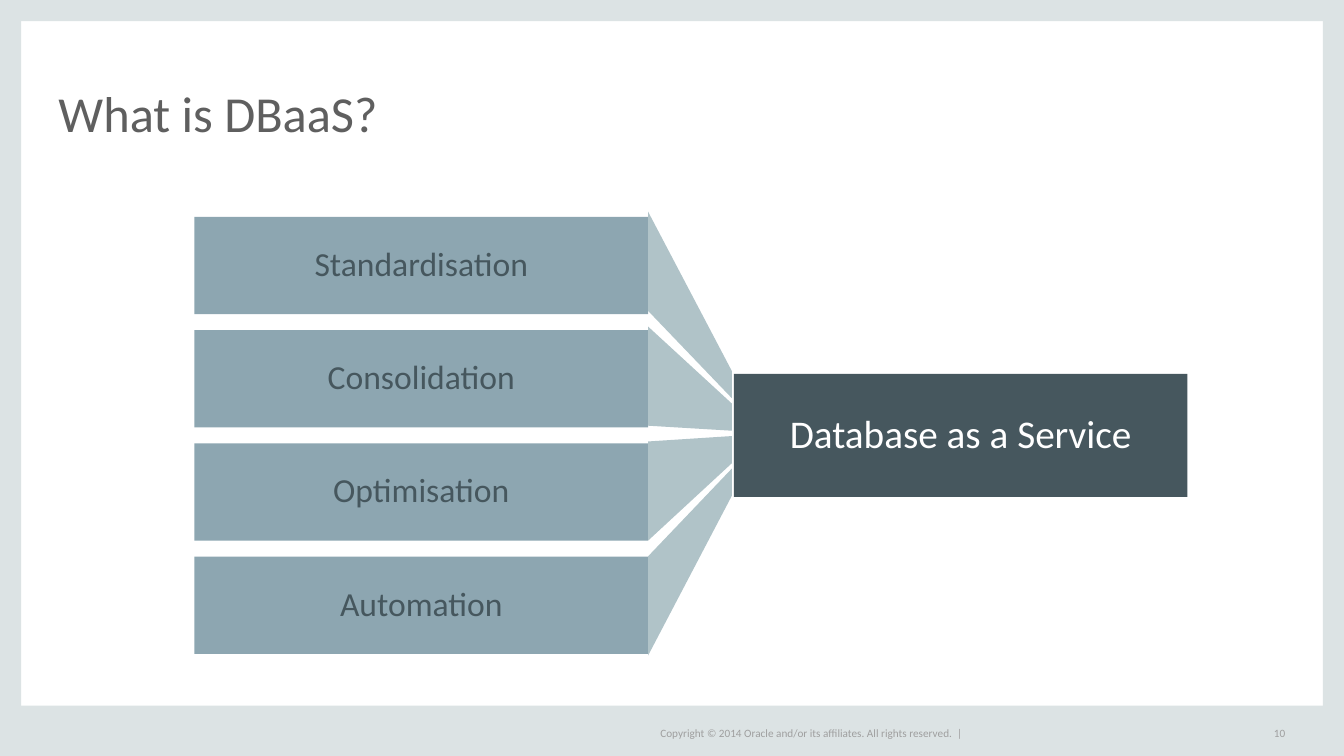
from dataclasses import dataclass

from pptx import Presentation
from pptx.dml.color import RGBColor
from pptx.enum.shapes import MSO_SHAPE as Preset
from pptx.enum.text import MSO_ANCHOR as Anchor, MSO_AUTO_SIZE as AutoSize, PP_ALIGN as Align
from pptx.shapes.autoshape import Shape
from pptx.slide import Slide
from pptx.util import Inches, Pt

WIDTH, HEIGHT = Inches(13.33), Inches(7.5)


@dataclass(frozen=True)
class Theme:
    font: str = "Calibri"
    frame: str = "DCE3E4"
    bar: str = "8DA6B1"
    beam: str = "B0C3C8"
    dark: str = "46575E"
    light: str = "FFFFFF"
    title: str = "5F5F5F"
    footer: str = "9F9F9F"
    title_size: int = 36
    service_size: int = 28
    bar_size: int = 24
    footer_size: int = 8


@dataclass(frozen=True)
class Area:
    """A rectangle in percent of the slide's width and height."""
    left: float
    top: float
    width: float
    height: float

    def emu(self) -> tuple[int, int, int, int]:
        return across(self.left), down(self.top), across(self.width), down(self.height)


@dataclass(frozen=True)
class Label:
    text: str
    size: int
    color: str
    align: Align = Align.LEFT
    spacing: float = 1.0


@dataclass(frozen=True)
class Stack:
    """Equal vertical spans, in percent of the slide's height."""
    top: float
    pitch: float
    depth: float

    def span(self, index: int) -> tuple[float, float]:
        start = self.top + index * self.pitch
        return start, start + self.depth


THEME = Theme()
FRAME = [Area(0, 0, 1.58, 100), Area(98.42, 0, 1.58, 100),
         Area(0, 93.33, 100, 6.67), Area(0, 0, 100, 2.8)]
TITLE = Area(4.35, 5.87, 91.28, 12.93)
COPYRIGHT = Area(49.13, 95.6, 22.88, 2.67)
PAGE_NUMBER = Area(92.48, 95.6, 3.15, 2.67)
SERVICE = Area(54.6, 49.47, 33.75, 16.27)

PILLARS = ["Standardisation", "Consolidation", "Optimisation", "Automation"]
BAR_LEFT, BAR_WIDTH = 14.47, 33.75
BARS = Stack(28.7, 14.98, 12.85)
BEAM_STARTS = Stack(28, 15.2, 13.12)
BEAM_ENDS = Stack(49.07, 4.31, 3.6)
BEAM_RIGHT = 54.45


def across(percent: float) -> int:
    return round(WIDTH * percent / 100)


def down(percent: float) -> int:
    return round(HEIGHT * percent / 100)


def paint(shape: Shape, color: str) -> None:
    shape.shadow.inherit = False
    shape.fill.solid()
    shape.fill.fore_color.rgb = RGBColor.from_string(color)
    shape.line.fill.background()


def write(shape: Shape, label: Label) -> None:
    para = shape.text_frame.paragraphs[0]
    para.text = label.text
    para.alignment = label.align
    para.line_spacing = label.spacing
    para.font.name = THEME.font
    para.font.size = Pt(label.size)
    para.font.color.rgb = RGBColor.from_string(label.color)


def remove_insets(shape: Shape) -> None:
    frame = shape.text_frame
    frame.margin_left = frame.margin_top = frame.margin_right = frame.margin_bottom = 0


def add_block(page: Slide, area: Area, color: str, label: Label | None = None) -> None:
    block = page.shapes.add_shape(Preset.RECTANGLE, *area.emu())
    paint(block, color)
    if label:
        block.text_frame.word_wrap = True
        block.text_frame.vertical_anchor = Anchor.MIDDLE
        write(block, label)


def add_footer(page: Slide, area: Area, text: str, align: Align) -> None:
    box = page.shapes.add_textbox(*area.emu())
    remove_insets(box)
    box.text_frame.word_wrap = False
    box.text_frame.vertical_anchor = Anchor.MIDDLE
    write(box, Label(text, THEME.footer_size, THEME.footer, align))


def set_title(page: Slide, text: str) -> None:
    title = page.shapes.title
    title.left, title.top, title.width, title.height = TITLE.emu()
    remove_insets(title)
    title.text_frame.auto_size = AutoSize.NONE
    title.text_frame.vertical_anchor = Anchor.BOTTOM
    write(title, Label(text, THEME.title_size, THEME.title, spacing=0.8))


def add_beams(page: Slide) -> None:
    """One outline with a tapering beam from each bar to the service."""
    left, right = across(BAR_LEFT + BAR_WIDTH), across(BEAM_RIGHT)
    builder = page.shapes.build_freeform(left, down(BEAM_STARTS.top))
    for index in range(len(PILLARS)):
        start_top, start_bottom = map(down, BEAM_STARTS.span(index))
        end_top, end_bottom = map(down, BEAM_ENDS.span(index))
        if index:
            builder.move_to(left, start_top)
        builder.add_line_segments(
            [(left, start_bottom), (right, end_bottom), (right, end_top)], close=True)
    paint(builder.convert_to_shape(), THEME.beam)


def main() -> None:
    deck = Presentation()
    deck.slide_width, deck.slide_height = WIDTH, HEIGHT
    page = deck.slides.add_slide(deck.slide_layouts[5])

    # Frame, footer and title
    for edge in FRAME:
        add_block(page, edge, THEME.frame)
    add_footer(page, COPYRIGHT,
               "Copyright © 2014 Oracle and/or its affiliates. All rights reserved.  |", Align.LEFT)
    add_footer(page, PAGE_NUMBER, "10", Align.RIGHT)
    set_title(page, "What is DBaaS?")

    # Four pillars
    for index, name in enumerate(PILLARS):
        top, _ = BARS.span(index)
        add_block(page, Area(BAR_LEFT, top, BAR_WIDTH, BARS.depth), THEME.bar,
                  Label(name, THEME.bar_size, THEME.dark, Align.CENTER, 0.9))

    # Beams and the service they lead to
    add_beams(page)
    add_block(page, SERVICE, THEME.dark,
              Label("Database as a Service", THEME.service_size, THEME.light, Align.CENTER, 0.9))

    deck.save("out.pptx")


if __name__ == "__main__":
    main()
